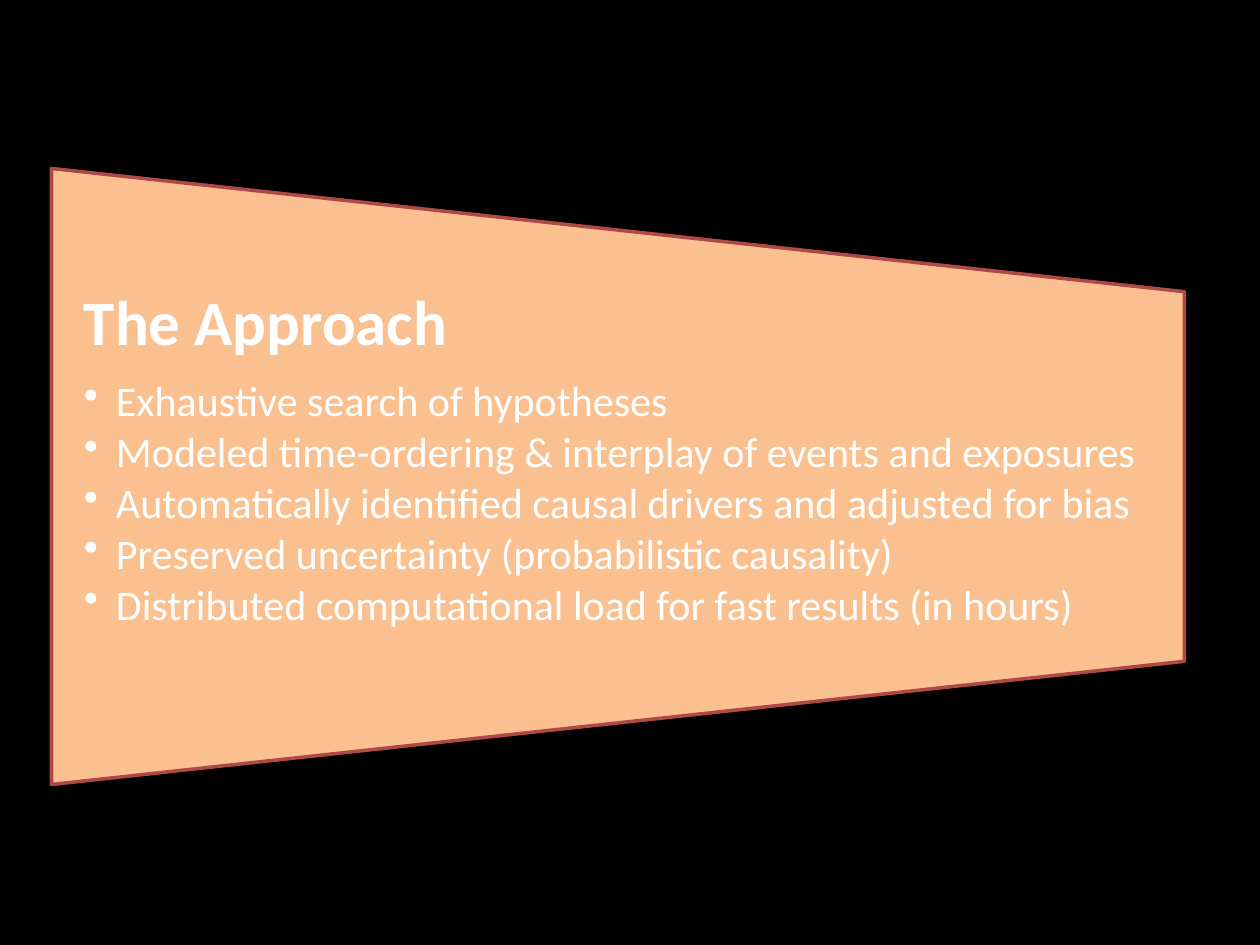
import pptx
import pptx.util
import pptx.dml.color
import pptx.enum.shapes
import pptx.enum.text
import pptx.oxml.ns
import lxml.etree

PX = 914400 // 126
BLACK = pptx.dml.color.RGBColor(0x00, 0x00, 0x00)
PEACH = pptx.dml.color.RGBColor(0xFA, 0xC0, 0x90)
RUST = pptx.dml.color.RGBColor(0xAE, 0x49, 0x46)
WHITE = pptx.dml.color.RGBColor(0xFF, 0xFF, 0xFF)

HEAD = "The Approach"
POINTS = [
    "Exhaustive search of hypotheses",
    "Modeled time-ordering & interplay of events and exposures",
    "Automatically identified causal drivers and adjusted for bias",
    "Preserved uncertainty (probabilistic causality)",
    "Distributed computational load for fast results (in hours)",
]
HEAD_FONT = {"name": "Calibri", "size": pptx.util.Pt(36), "bold": True}
POINT_FONT = {"name": "Calibri", "size": pptx.util.Pt(24), "bold": False}
HEAD_GAP = {"line_spacing": 0.9, "space_after": pptx.util.Pt(12)}
POINT_GAP = {"line_spacing": 0.9, "space_after": pptx.util.Pt(3.2)}


def assign(item, values):
    for key, value in values.items():
        setattr(item, key, value)


def add_panel(slide, left, top, width, height):
    """Draw a panel that narrows to the right: a trapezoid on its side."""
    shift = (width - height) // 2
    kind = pptx.enum.shapes.MSO_SHAPE.FLOWCHART_MANUAL_OPERATION
    panel = slide.shapes.add_shape(
        kind, (left + shift) * PX, (top - shift) * PX, height * PX, width * PX)
    panel.rotation = 270
    panel.shadow.inherit = False
    panel.fill.solid()
    panel.fill.fore_color.rgb = PEACH
    panel.line.color.rgb = RUST
    panel.line.width = pptx.util.Pt(2)


def add_bullet(para, indent):
    props = para._p.get_or_add_pPr()
    props.set("marL", str(indent * PX))
    props.set("indent", str(-indent * PX))
    tag = pptx.oxml.ns.qn("a:buChar")
    lxml.etree.SubElement(props, tag).set("char", "•")


def write(para, text, font, gap):
    para.text = text
    assign(para, gap)
    assign(para.font, font)
    assign(para.runs[0].font, font)
    para.runs[0].font.color.rgb = WHITE


def add_list(slide, left, top, width, height):
    box = slide.shapes.add_textbox(left * PX, top * PX, width * PX, height * PX)
    frame = box.text_frame
    assign(frame, {
        "word_wrap": True,
        "vertical_anchor": pptx.enum.text.MSO_ANCHOR.TOP,
        "margin_left": 32 * PX, "margin_right": 32 * PX,
        "margin_top": 0, "margin_bottom": 0,
    })
    write(frame.paragraphs[0], HEAD, HEAD_FONT, HEAD_GAP)
    for point in POINTS:
        para = frame.add_paragraph()
        para.level = 1
        write(para, point, POINT_FONT, POINT_GAP)
        add_bullet(para, 32)


def add_approach(slide, left, top, width, height):
    """Place the panel, and the list in the part free of its slopes."""
    add_panel(slide, left, top, width, height)
    slope = height // 5
    add_list(slide, left, top + slope, width, height - 2 * slope)


def main():
    deck = pptx.Presentation()
    deck.slide_width = pptx.util.Inches(10)
    deck.slide_height = pptx.util.Inches(7.5)
    slide = deck.slides.add_slide(deck.slide_layouts[6])
    slide.background.fill.solid()
    slide.background.fill.fore_color.rgb = BLACK
    add_approach(slide, 52, 168, 1133, 616)
    deck.save("out.pptx")


if __name__ == "__main__":
    main()
